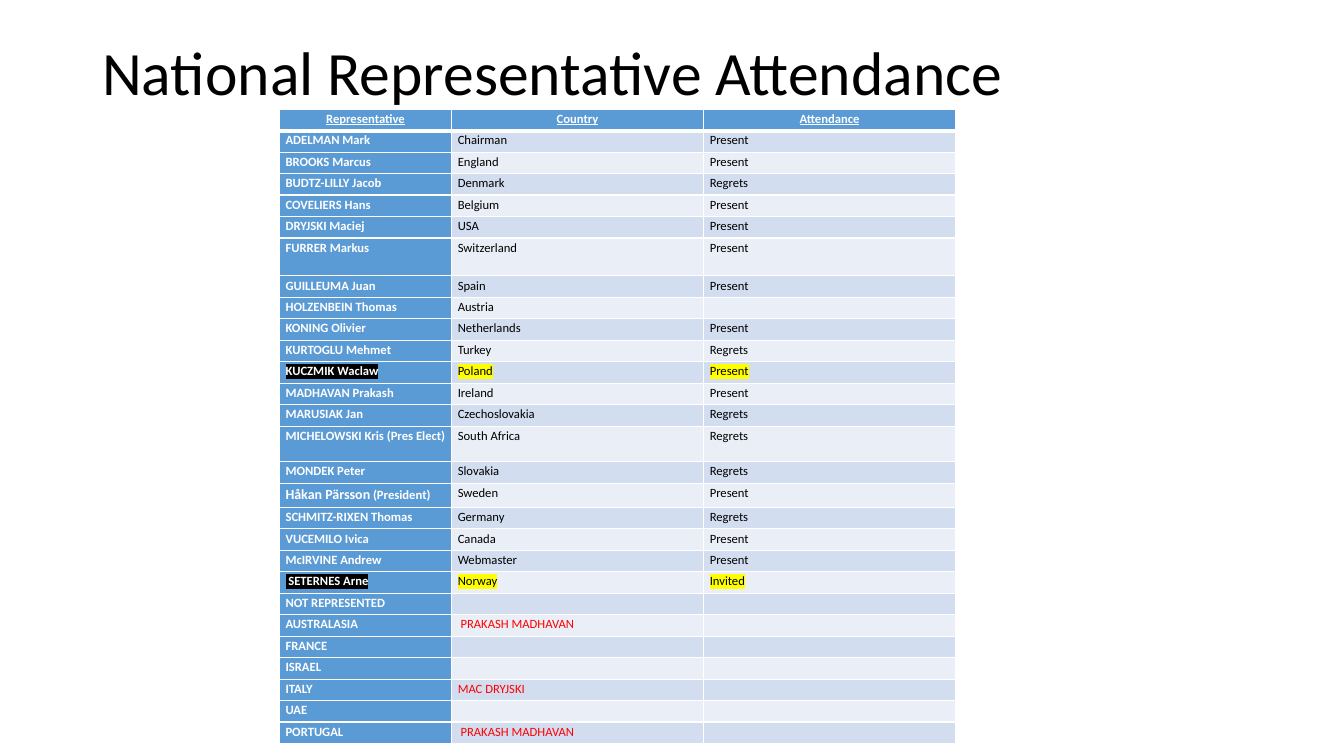
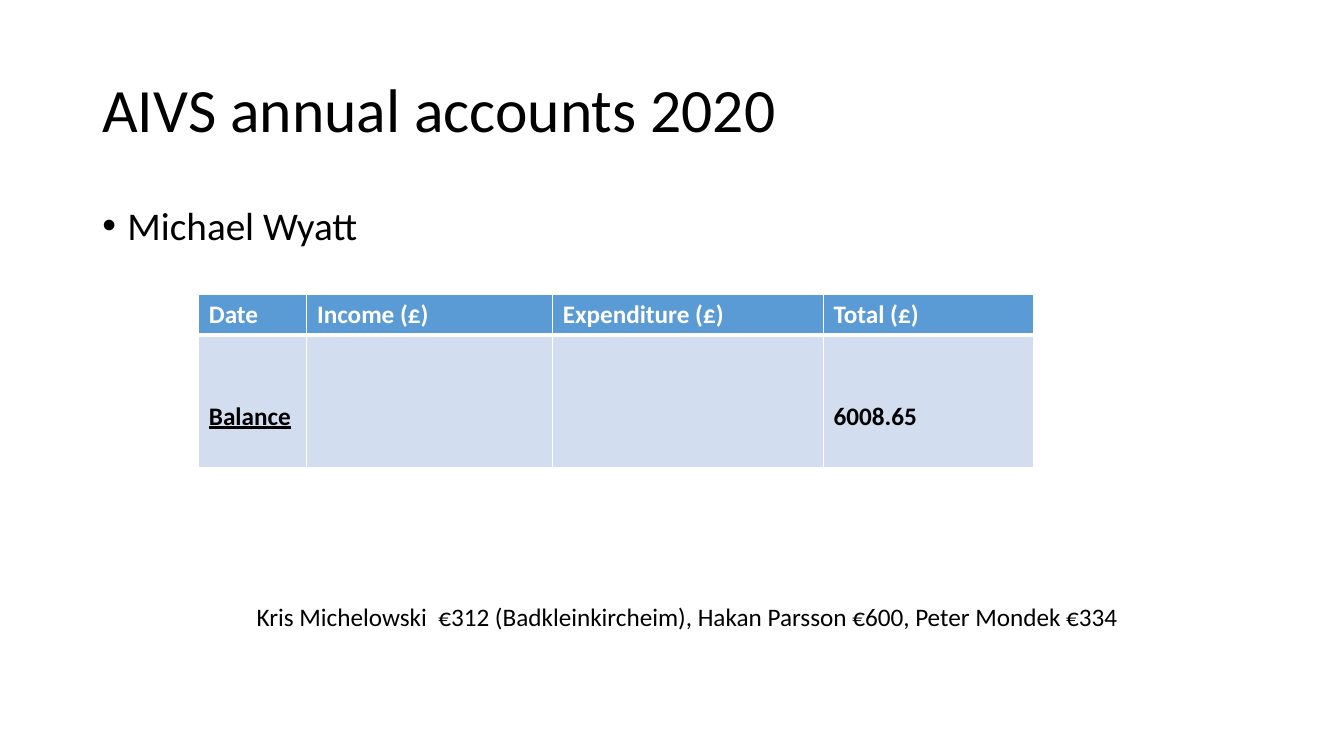
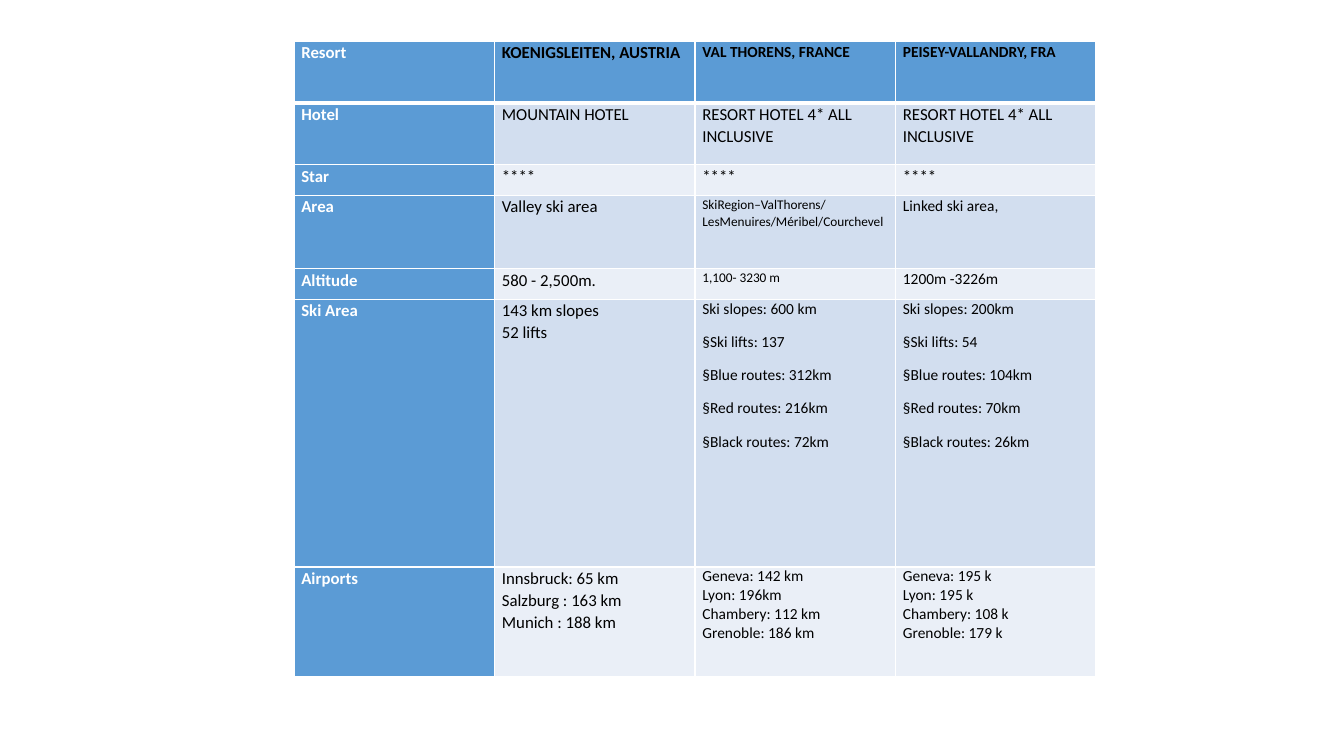
"""Build the three association meeting slides."""
from dataclasses import dataclass, replace

from lxml import etree
from pptx import Presentation
from pptx import util as u
from pptx.dml.color import RGBColor
from pptx.enum import text
from pptx.oxml import ns

EMU_PER_PX = 9525
FONT = "Calibri"
BLACK, WHITE, RED, YELLOW = "000000", "FFFFFF", "FF0000", "FFFF00"
BLUE, BANDS = "5B9BD5", ("D2DEEF", "EAEFF7")
TITLE_BOX = (88, 1104, 139)


@dataclass(frozen=True)
class Style:
    """Describe how a passage of text looks."""
    size: float
    color: str = BLACK
    bold: bool = False
    underline: bool = False
    highlight: str = ""
    align: text.PP_ALIGN = text.PP_ALIGN.LEFT
    spacing: float = 1.0
    after: float = 0


TITLE = Style(44, spacing=0.9)
BULLET = Style(28, spacing=0.9)
NOTE = Style(18)
ROSTER = Style(9, spacing=1.15)
RESORT = Style(12, spacing=1.07)

PRESENT, REGRETS = "Present", "Regrets"
ATTENDANCE = [
    ("ADELMAN Mark", "Chairman", PRESENT),
    ("BROOKS Marcus", "England", PRESENT),
    ("BUDTZ-LILLY Jacob", "Denmark", REGRETS),
    ("COVELIERS Hans", "Belgium", PRESENT),
    ("DRYJSKI Maciej", "USA", PRESENT),
    ("FURRER Markus", "Switzerland", PRESENT),
    ("GUILLEUMA Juan", "Spain", PRESENT),
    ("HOLZENBEIN Thomas", "Austria", ""),
    ("KONING Olivier", "Netherlands", PRESENT),
    ("KURTOGLU Mehmet", "Turkey", REGRETS),
    ("KUCZMIK Waclaw", "Poland", PRESENT),
    ("MADHAVAN Prakash", "Ireland", PRESENT),
    ("MARUSIAK Jan", "Czechoslovakia", REGRETS),
    ("MICHELOWSKI Kris (Pres Elect)", "South Africa", REGRETS),
    ("MONDEK Peter", "Slovakia", REGRETS),
    ((("Håkan Pärsson", 10), (" (President)", 9)), "Sweden", PRESENT),
    ("SCHMITZ-RIXEN Thomas", "Germany", REGRETS),
    ("VUCEMILO Ivica", "Canada", PRESENT),
    ("McIRVINE Andrew", "Webmaster", PRESENT),
    (" SETERNES Arne", "Norway", "Invited"),
]
UNREPRESENTED = [
    ("NOT REPRESENTED", ""),
    ("AUSTRALASIA", " PRAKASH MADHAVAN"),
    ("FRANCE", ""),
    ("ISRAEL", ""),
    ("ITALY", "MAC DRYJSKI"),
    ("UAE", ""),
    ("PORTUGAL", " PRAKASH MADHAVAN"),
]
HIGHLIGHTED_COUNTRIES = ("Poland", "Norway")
TALL_ROWS = {6: 36, 14: 34, 16: 23}


def px(length):
    """Turn px into EMU."""
    return u.Emu(round(length * EMU_PER_PX))


def rgb(color):
    """Turn a hex string into a colour."""
    return RGBColor.from_string(color)


def add_solid(parent, tag, color):
    """Append an element that holds one plain colour."""
    holder = etree.SubElement(parent, ns.qn(tag))
    etree.SubElement(holder, ns.qn("a:srgbClr")).set("val", color)
    return holder


def add_run(paragraph, words, style):
    """Add one styled run."""
    run = paragraph.add_run()
    run.text = words
    font = run.font
    font.name, font.size = FONT, u.Pt(style.size)
    font.bold, font.underline = style.bold, style.underline
    font.color.rgb = rgb(style.color)
    if style.highlight:
        properties = run._r.get_or_add_rPr()
        marker = add_solid(properties, "a:highlight", style.highlight)
        properties.find(ns.qn("a:solidFill")).addnext(marker)


def write_lines(frame, lines, style):
    """Write one paragraph per line; a line is a string or (words, size) pairs."""
    for index, line in enumerate(lines):
        paragraph = frame.add_paragraph() if index else frame.paragraphs[0]
        paragraph.alignment = style.align
        paragraph.line_spacing = style.spacing
        if style.after:
            paragraph.space_after = u.Pt(style.after)
        runs = [(line, style.size)] if isinstance(line, str) else line
        for words, size in runs:
            if words:
                add_run(paragraph, words, replace(style, size=size))
            else:
                ending = etree.SubElement(paragraph._p, ns.qn("a:endParaRPr"))
                ending.set("sz", str(round(size * 100)))


def add_text(slide, box, line, style, anchor=text.MSO_ANCHOR.TOP):
    """Add a wrapping text box with one paragraph."""
    frame = slide.shapes.add_textbox(*map(px, box)).text_frame
    frame.word_wrap = True
    frame.vertical_anchor = anchor
    write_lines(frame, [line], style)
    return frame.paragraphs[0]


def add_title(slide, top, words):
    """Add the slide title."""
    left, width, height = TITLE_BOX
    add_text(slide, (left, top, width, height), words, TITLE, text.MSO_ANCHOR.MIDDLE)


def add_bullet(paragraph, indent):
    """Give a paragraph a hanging round bullet."""
    properties = paragraph._p.get_or_add_pPr()
    properties.set("marL", str(px(indent)))
    properties.set("indent", str(-px(indent)))
    etree.SubElement(properties, ns.qn("a:buFont")).set("typeface", "Arial")
    etree.SubElement(properties, ns.qn("a:buChar")).set("char", "•")


def set_borders(cell, row):
    """Draw white cell borders, thick under the header row."""
    properties = cell._tc.get_or_add_tcPr()
    thick = {("B", 0), ("T", 1)}
    for index, side in enumerate("LRTB"):
        border = etree.Element(ns.qn(f"a:ln{side}"))
        border.set("w", str(u.Pt(3 if (side, row) in thick else 1)))
        add_solid(border, "a:solidFill", WHITE)
        properties.insert(index, border)


def add_table(slide, corner, widths, heights, rows, inset, labelled=True):
    """Add a banded table whose cells are (style, lines) pairs."""
    size = (sum(widths), sum(heights))
    table = slide.shapes.add_table(
        len(heights), len(widths), *map(px, corner + size)).table
    for column, width in zip(table.columns, widths):
        column.width = px(width)
    for row, height in zip(table.rows, heights):
        row.height = px(height)
    for r, row in enumerate(rows):
        for c, (style, lines) in enumerate(row):
            cell = table.cell(r, c)
            cell.margin_left = cell.margin_right = px(inset[0])
            cell.margin_top = cell.margin_bottom = px(inset[1])
            write_lines(cell.text_frame, lines, style)
            accent = r == 0 or (labelled and c == 0)
            cell.fill.solid()
            cell.fill.fore_color.rgb = rgb(BLUE if accent else BANDS[(r - 1) % 2])
            set_borders(cell, r)
    return table


def heading(style, **changes):
    """Return the white bold version of a style."""
    return replace(style, color=WHITE, bold=True, **changes)


def attendance_rows():
    """Return the cells of the attendance table."""
    header = heading(ROSTER, underline=True, align=text.PP_ALIGN.CENTER)
    rows = [[(header, [name]) for name in ("Representative", "Country", "Attendance")]]
    for person, country, status in ATTENDANCE:
        marked = country in HIGHLIGHTED_COUNTRIES
        label = heading(ROSTER, highlight=BLACK if marked else "")
        body = replace(ROSTER, highlight=YELLOW if marked else "")
        rows.append([(label, [person]), (body, [country]), (body, [status])])
    for country, delegate in UNREPRESENTED:
        rows.append([(heading(ROSTER), [country]),
                     (replace(ROSTER, color=RED), [delegate]), (ROSTER, [""])])
    return rows


def resort_rows():
    """Return the cells of the resort comparison table."""
    medium, small = replace(RESORT, size=11), replace(RESORT, size=9.5)
    listing = replace(medium, spacing=1.0)
    spaced = replace(listing, after=10.2)
    club = "RESORT HOTEL 4* ALL INCLUSIVE"
    stars = (RESORT, ["****"])
    name, short_name = replace(RESORT, bold=True), replace(medium, bold=True)
    content = {
        "Resort": [(name, ["KOENIGSLEITEN, AUSTRIA"]),
                   (short_name, ["VAL THORENS, FRANCE"]),
                   (short_name, ["PEISEY-VALLANDRY, FRA"])],
        "Hotel": [(RESORT, ["MOUNTAIN HOTEL"]), (RESORT, [club]), (RESORT, [club])],
        "Star": [stars] * 3,
        "Area": [(RESORT, ["Valley ski area"]),
                 (small, ["SkiRegion–ValThorens/LesMenuires/Méribel/Courchevel"]),
                 (medium, ["Linked ski area,"])],
        "Altitude": [(RESORT, ["580 - 2,500m."]), (small, ["1,100- 3230 m"]),
                     (medium, ["1200m -3226m"])],
        "Ski Area": [
            (RESORT, ["143 km slopes", "52 lifts"]),
            (spaced, ["Ski slopes: 600 km", "§Ski lifts: 137", "§Blue routes: 312km",
                      "§Red routes: 216km", "§Black routes: 72km"]),
            (spaced, ["Ski slopes: 200km", "§Ski lifts: 54", "§Blue routes: 104km",
                      "§Red routes: 70km", "§Black routes: 26km"])],
        "Airports": [
            (RESORT, ["Innsbruck: 65 km", "Salzburg : 163 km", "Munich : 188 km"]),
            (listing, ["Geneva: 142 km", "Lyon: 196km", "Chambery: 112 km",
                       "Grenoble: 186 km"]),
            (listing, ["Geneva: 195 k", "Lyon: 195 k", "Chambery: 108 k",
                       "Grenoble: 179 k"])],
    }
    return [[(heading(RESORT), [label]), *cells] for label, cells in content.items()]


def attendance_slide(slide):
    """Build the attendance slide."""
    add_title(slide, 2, "National Representative Attendance")
    rows = attendance_rows()
    regular = (605 - sum(TALL_ROWS.values())) / (len(rows) - len(TALL_ROWS))
    heights = [TALL_ROWS.get(index, regular) for index in range(len(rows))]
    add_table(slide, (266, 104), (164, 240, 240), heights, rows, (6, 0))


def accounts_slide(slide):
    """Build the accounts slide."""
    add_title(slide, 38, "AIVS annual accounts 2020")
    treasurer = add_text(slide, (88, 192, 1104, 457), "Michael Wyatt", BULLET)
    add_bullet(treasurer, 24)
    header, total = heading(NOTE), replace(NOTE, bold=True)
    rows = [
        [(header, [name])
         for name in ("Date", "Income (£)", "Expenditure (£)", "Total (£)")],
        [(replace(total, underline=True), ["Balance"]), (NOTE, [""]), (NOTE, [""]),
         (total, ["6008.65"])],
    ]
    accounts = add_table(slide, (189, 280), (103, 234, 258, 200), (39, 126), rows,
                         (10, 5), labelled=False)
    for column in (0, 3):
        accounts.cell(1, column).margin_top = px(63)
    add_text(slide, (235, 568, 923, 38),
             "Kris Michelowski  €312 (Badkleinkircheim), Hakan Parsson €600, "
             "Peter Mondek €334", NOTE)


def resorts_slide(slide):
    """Build the resort comparison slide."""
    add_table(slide, (280, 39), [191] * 4, (59, 59, 29, 70, 29, 255, 104),
              resort_rows(), (7, 0))


def main():
    """Build and save the presentation."""
    deck = Presentation()
    deck.slide_width, deck.slide_height = px(1280), px(720)
    for build in (attendance_slide, accounts_slide, resorts_slide):
        build(deck.slides.add_slide(deck.slide_layouts[6]))
    deck.save("out.pptx")


if __name__ == "__main__":
    main()
